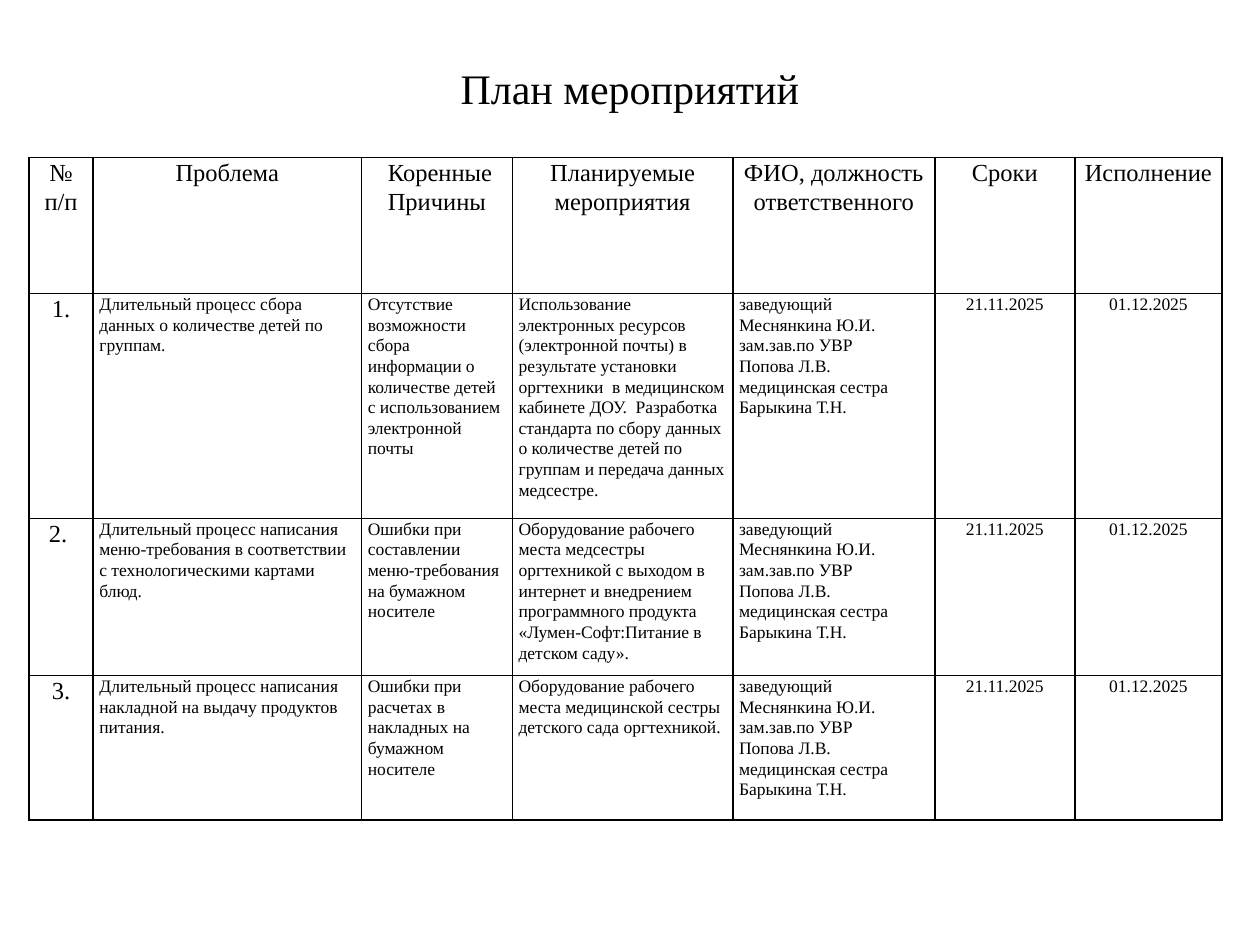
"""Build the action plan slide with its table of problems, causes and measures."""
import dataclasses

import lxml.etree
import pptx
import pptx.dml.color
import pptx.enum.text
import pptx.oxml.ns
import pptx.util

Pt = pptx.util.Pt
ALIGN = pptx.enum.text.PP_ALIGN
ANCHOR = pptx.enum.text.MSO_ANCHOR


@dataclasses.dataclass(frozen=True)
class Theme:
    font: str = "Times New Roman"
    ink: str = "000000"
    title: int = 24
    heading: int = 14
    body: int = 10
    line_spacing: float = 1.07


theme = Theme()


def format_paragraphs(text_frame, size, alignment, line_spacing):
    for paragraph in text_frame.paragraphs:
        paragraph.alignment = alignment
        paragraph.line_spacing = line_spacing
        for run in paragraph.runs:
            run.font.name = theme.font
            run.font.size = Pt(size)
            run.font.color.rgb = pptx.dml.color.RGBColor.from_string(theme.ink)


def add_borders(cell):
    qn = pptx.oxml.ns.qn
    properties = cell._tc.get_or_add_tcPr()
    for side in ("a:lnL", "a:lnR", "a:lnT", "a:lnB"):
        line = lxml.etree.SubElement(properties, qn(side), w=str(Pt(1)))
        fill = lxml.etree.SubElement(line, qn("a:solidFill"))
        lxml.etree.SubElement(fill, qn("a:srgbClr"), val=theme.ink)


responsible = (
    "заведующий Меснянкина Ю.И.\nзам.зав.по УВР\nПопова Л.В.\n"
    "медицинская сестра\nБарыкина Т.Н."
)
schedule = (responsible, "21.11.2025", "01.12.2025")
plan = [
    (
        "№ п/п", "Проблема", " Коренные Причины", "Планируемые мероприятия",
        "ФИО, должность ответственного", "Сроки", "Исполнение",
    ),
    (
        "1.",
        "Длительный процесс сбора данных о количестве детей по группам.",
        "Отсутствие возможности сбора информации о количестве детей "
        "с использованием электронной почты",
        "Использование электронных ресурсов (электронной почты) в результате "
        "установки оргтехники  в медицинском кабинете ДОУ.  Разработка стандарта "
        "по сбору данных о количестве детей по группам и передача данных медсестре.",
        *schedule,
    ),
    (
        "2. ",
        "Длительный процесс написания меню-требования в соответствии "
        "с технологическими картами блюд.",
        "Ошибки при составлении меню-требования на бумажном носителе",
        "Оборудование рабочего места медсестры оргтехникой с выходом в интернет "
        "и внедрением программного продукта «Лумен-Софт:Питание в детском саду».",
        *schedule,
    ),
    (
        "3.",
        "Длительный процесс написания накладной на выдачу продуктов питания.",
        "Ошибки при расчетах в накладных на бумажном носителе",
        "Оборудование рабочего места медицинской сестры детского сада оргтехникой.",
        *schedule,
    ),
]
column_widths = (36.6, 153.4, 86.2, 126, 115.4, 80, 84.2)
row_heights = (77.8, 117.7, 82.6, 82.6)
centred_columns = (0, 5, 6)

presentation = pptx.Presentation()
presentation.slide_width = Pt(720)
presentation.slide_height = Pt(540)
slide = presentation.slides.add_slide(presentation.slide_layouts[6])

title = slide.shapes.add_textbox(Pt(36), Pt(21.6), Pt(648), Pt(57))
title.text_frame.word_wrap = True
title.text_frame.vertical_anchor = ANCHOR.MIDDLE
title.text_frame.text = "План мероприятий"
format_paragraphs(title.text_frame, theme.title, ALIGN.CENTER, 1)

table = slide.shapes.add_table(
    len(plan), len(column_widths), Pt(16.6), Pt(90),
    Pt(sum(column_widths)), Pt(sum(row_heights)),
).table
table.first_row = False
table.horz_banding = False
for column, width in zip(table.columns, column_widths):
    column.width = Pt(width)
for row, height in zip(table.rows, row_heights):
    row.height = Pt(height)

for row_index, texts in enumerate(plan):
    for column_index, text in enumerate(texts):
        cell = table.cell(row_index, column_index)
        cell.margin_left = cell.margin_right = Pt(3.6)
        cell.margin_top = cell.margin_bottom = Pt(0)
        cell.vertical_anchor = ANCHOR.TOP
        add_borders(cell)
        cell.fill.background()
        cell.text_frame.text = text
        is_heading = row_index == 0 or column_index == 0
        is_centred = row_index == 0 or column_index in centred_columns
        format_paragraphs(
            cell.text_frame,
            theme.heading if is_heading else theme.body,
            ALIGN.CENTER if is_centred else ALIGN.LEFT,
            theme.line_spacing,
        )

presentation.save("out.pptx")
